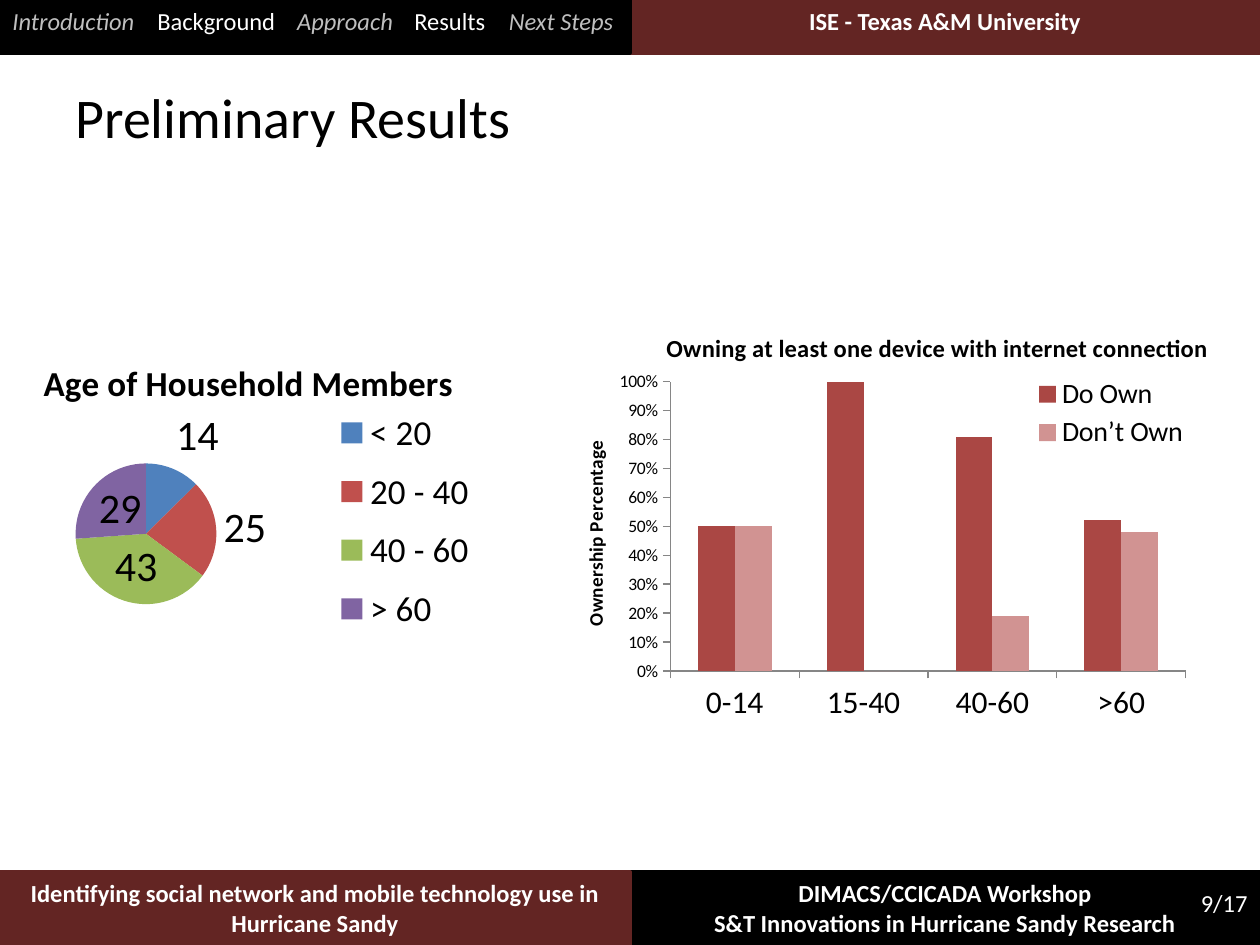
from lxml import etree
from pptx import Presentation, util as u
from pptx.chart.data import CategoryChartData
from pptx.dml.color import RGBColor
from pptx.enum import chart as ch, shapes, text
from pptx.oxml.ns import qn

BLACK, WHITE, MAROON, GREY = "000000", "FFFFFF", "632523", "BFBFBF"
FACE = "Calibri"


def tint(color, code):
    color.rgb = RGBColor.from_string(code)


def style(font, size, color=BLACK, bold=False, italic=False):
    font.name, font.size = FACE, u.Pt(size)
    font.bold, font.italic = bold, italic
    tint(font.color, color)


def write(par, words, **look):
    run = par.add_run()
    run.text = words
    style(run.font, **look)


def paint(fill, code):
    fill.solid()
    tint(fill.fore_color, code)


def place(chart, path, at):
    """Set a manual layout, in fractions of the chart, on one chart part."""
    part = chart.element.xpath(path)[0]
    for old in part.findall(qn("c:layout")):
        part.remove(old)
    layout = etree.Element(qn("c:layout"))
    part.insert(0 if path.endswith("plotArea") else 1, layout)
    box = etree.SubElement(layout, qn("c:manualLayout"))
    rules = [("layoutTarget", "inner")] if path.endswith("plotArea") else []
    rules += [("xMode", "edge"), ("yMode", "edge"), *zip("xywh", at)]
    for tag, val in rules:
        etree.SubElement(box, qn("c:" + tag)).set("val", str(val))


class Deck:
    def __init__(self):
        self.prs = Presentation()
        self.prs.slide_width, self.prs.slide_height = u.Inches(10), u.Inches(7.5)
        self.slide = self.prs.slides.add_slide(self.prs.slide_layouts[6])

    def band(self, at, code):
        rect = self.slide.shapes.add_shape(
            shapes.MSO_SHAPE.RECTANGLE, *map(u.Inches, at))
        rect.shadow.inherit = False
        paint(rect.fill, code)
        tint(rect.line.color, code)
        rect.line.width = u.Pt(2)

    def label(self, at, lines=(), align=text.PP_ALIGN.LEFT,
              anchor=text.MSO_ANCHOR.TOP, **look):
        frame = self.slide.shapes.add_textbox(*map(u.Inches, at)).text_frame
        frame.word_wrap, frame.vertical_anchor = True, anchor
        for i, line in enumerate(lines):
            par = frame.add_paragraph() if i else frame.paragraphs[0]
            par.alignment = align
            write(par, line, **look)
        return frame.paragraphs[0]

    def tabs(self, at, items, stops):
        par = self.label(at)
        props = par._p.get_or_add_pPr()
        tabs = etree.SubElement(props, qn("a:tabLst"))
        for stop in stops:
            etree.SubElement(tabs, qn("a:tab"),
                             pos=str(u.Inches(stop)), algn="l")
        for i, (words, live) in enumerate(items):
            write(par, ("\t" if i else "") + words, size=14,
                  color=WHITE if live else GREY, italic=not live)

    def chart(self, kind, at, cats, rows, title, size, key):
        data = CategoryChartData()
        data.categories = cats
        for name, vals in rows:
            data.add_series(name, vals)
        chart = self.slide.shapes.add_chart(
            kind, *map(u.Inches, at), data).chart
        chart.has_title = True
        write(chart.chart_title.text_frame.paragraphs[0], title,
              size=size, bold=True)
        chart.has_legend = True
        chart.legend.position = ch.XL_LEGEND_POSITION.RIGHT
        chart.legend.include_in_layout = False
        style(chart.legend.font, key)
        return chart

    def pie(self, at, cats, vals, codes, spots, **rest):
        chart = self.chart(ch.XL_CHART_TYPE.PIE, at, cats,
                           [("Series 1", vals)], **rest)
        plot = chart.plots[0]
        plot.vary_by_categories = True
        for i, (code, spot) in enumerate(zip(codes, spots)):
            point = plot.series[0].points[i]
            paint(point.format.fill, code)
            style(point.data_label.font, 24)
            point.data_label.position = spot
        return chart

    def bars(self, at, cats, rows, codes, side, **rest):
        chart = self.chart(ch.XL_CHART_TYPE.COLUMN_CLUSTERED, at, cats,
                           rows, **rest)
        plot = chart.plots[0]
        plot.vary_by_categories = False
        plot.gap_width, plot.overlap = 150, 0
        for row, code in zip(plot.series, codes):
            paint(row.format.fill, code)
        for axis, size in ((chart.category_axis, 18), (chart.value_axis, 10)):
            style(axis.tick_labels.font, size)
            axis.has_major_gridlines = False
            axis.major_tick_mark = ch.XL_TICK_MARK.OUTSIDE
            tint(axis.format.line.color, "868686")
        axis = chart.value_axis
        axis.minimum_scale, axis.maximum_scale, axis.major_unit = 0, 1, 0.1
        axis.tick_labels.number_format = "0%"
        axis.tick_labels.number_format_is_linked = False
        write(axis.axis_title.text_frame.paragraphs[0], side,
              size=11, bold=True)
        return chart


def main():
    deck = Deck()
    mid = text.PP_ALIGN.CENTER
    bold = dict(align=mid, size=14, color=WHITE, bold=True)

    # Header and footer bands
    for left, top, high, code in ((5, 6.92, 0.58, BLACK), (0, 6.92, 0.58, MAROON),
                                  (5, 0, 0.42, MAROON), (0, 0, 0.42, BLACK)):
        deck.band((left, top, 5, high), code)

    # Footer and header text
    deck.label((9.08, 7, 0.92, 0.34), ["9/17"],
               align=text.PP_ALIGN.RIGHT, size=14, color=WHITE)
    deck.label((0, 6.92, 5, 0.57),
               ["Identifying social network and mobile technology use in "
                "Hurricane Sandy"], **bold)
    deck.label((5, 6.92, 5, 0.57),
               ["DIMACS/CCICADA Workshop",
                "S&T Innovations in Hurricane Sandy Research"], **bold)
    deck.label((5, 0, 5, 0.34), ["ISE - Texas A&M University"], **bold)

    # Title
    deck.label((0.5, 0.3, 9, 1.25), ["Preliminary Results"],
               anchor=text.MSO_ANCHOR.MIDDLE, size=32)

    # Age pie
    spot = ch.XL_LABEL_POSITION
    pie = deck.pie(
        (-0.67, 2.5, 5.08, 2.92), ["< 20", "20 - 40", "40 - 60", "> 60"],
        [14, 25, 43, 29], ["4F81BD", "C0504D", "9BBB59", "8064A2"],
        [spot.OUTSIDE_END] * 2 + [spot.CENTER] * 2,
        title="Age of Household Members", size=20, key=20)
    place(pie, "c:chart/c:title", (0.19, 0.1))
    place(pie, "c:chart/c:plotArea", (0.25, 0.4, 0.22, 0.39))
    place(pie, "c:chart/c:legend", (0.65, 0.22, 0.23, 0.68))

    # Ownership columns
    bars = deck.bars(
        (4.33, 2.42, 6.6, 3.38), ["0-14", "15-40", "40-60", ">60"],
        [("Do Own", [0.5, 1, 0.81, 0.52]), ("Don’t Own", [0.5, 0, 0.19, 0.48])],
        ["AA4744", "D19392"], "Ownership Percentage",
        title="Owning at least one device with internet connection",
        size=14, key=16)
    place(bars, "c:chart/c:title", (0.14, 0.05))
    place(bars, "c:chart/c:plotArea", (0.15, 0.18, 0.62, 0.68))
    place(bars, "c:chart/c:legend", (0.58, 0.16, 0.2, 0.19))
    place(bars, "c:chart/c:plotArea/c:valAx/c:title", (0.04, 0.31))

    # Section tabs
    deck.tabs((0, 0, 5.17, 0.34),
              [("Introduction", False), ("Background", True),
               ("Approach", False), ("Results", True), ("Next Steps", False)],
              [1.15, 2.26, 3.19, 3.94])
    deck.prs.save("out.pptx")


if __name__ == "__main__":
    main()
